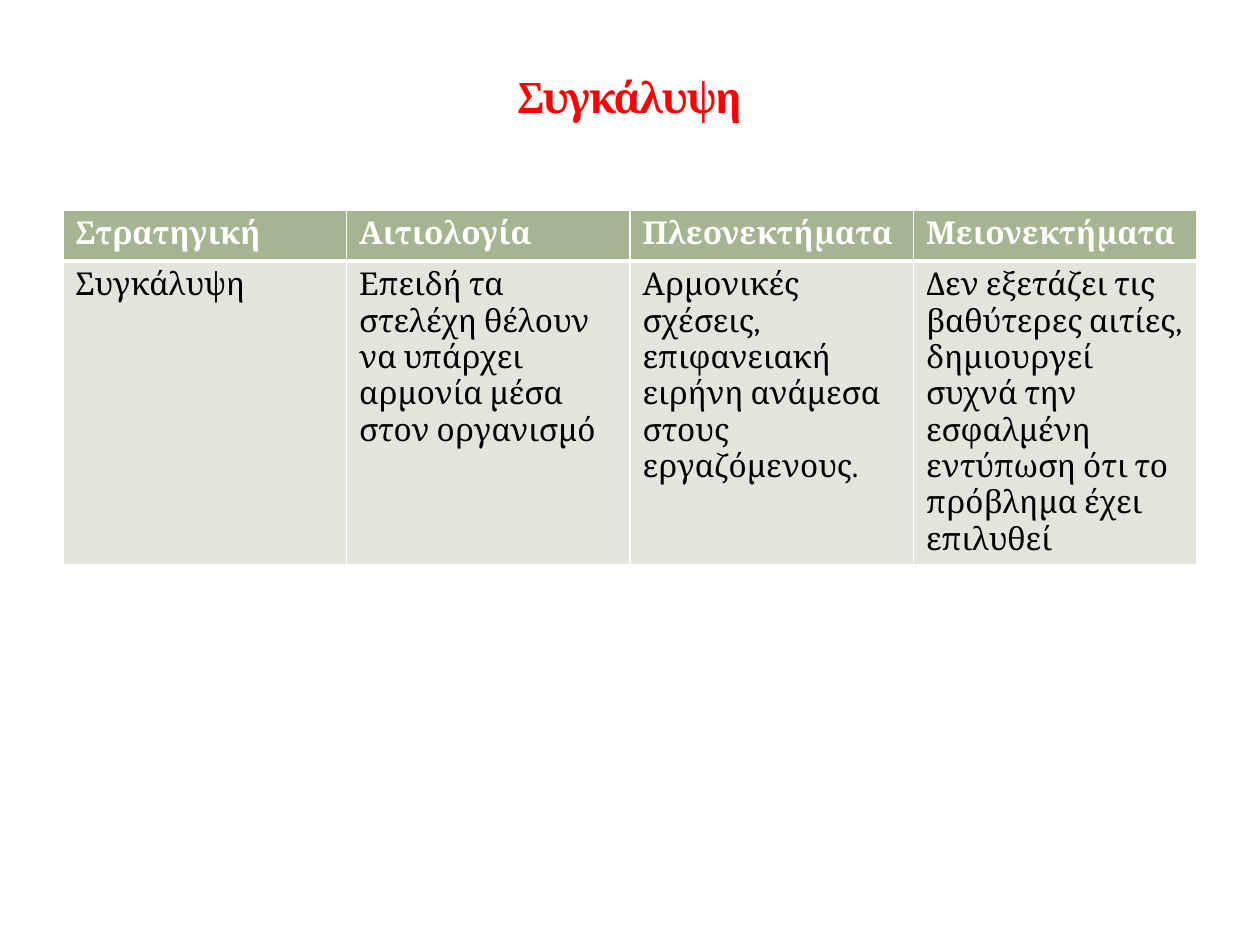
from lxml import etree
from pptx import Presentation, util as u
from pptx.dml.color import RGBColor
from pptx.enum import text
from pptx.oxml import ns

COLORS = {"title": "FF0000", "outline": "E0DDB1", "head": "A5B592",
          "body": "E1E5DC", "white": "FFFFFF", "black": "000000"}
ROWS = [
    ["Στρατηγική", "Αιτιολογία", "Πλεονεκτήματα", "Μειονεκτήματα"],
    ["Συγκάλυψη",
     "Επειδή τα στελέχη θέλουν να υπάρχει αρμονία μέσα στον οργανισμό",
     "Αρμονικές σχέσεις, επιφανειακή ειρήνη ανάμεσα στους εργαζόμενους.",
     "Δεν εξετάζει τις βαθύτερες αιτίες, δημιουργεί συχνά την εσφαλμένη "
     "εντύπωση ότι το πρόβλημα έχει επιλυθεί"],
]


def rgb(name):
    return RGBColor.from_string(COLORS[name])


def add_line(parent, tag, color, width, alpha=100):
    ln = etree.Element(ns.qn(tag), w=str(u.Pt(width)))
    fill = etree.SubElement(ln, ns.qn("a:solidFill"))
    clr = etree.SubElement(fill, ns.qn("a:srgbClr"), val=COLORS[color])
    if alpha < 100:
        etree.SubElement(clr, ns.qn("a:alpha"), val=str(alpha * 1000))
    parent.append(ln)
    return ln


def write(tf, content, size=18, color="black", bold=False, align=None, font="Cambria"):
    p = tf.paragraphs[0]
    p.alignment = align
    r = p.add_run()
    r.text = content
    r.font.name, r.font.size, r.font.bold = font, u.Pt(size), bold
    r.font.color.rgb = rgb(color)
    return r


class Deck:
    """Hold the presentation style and the current slide."""

    def __init__(self, width, height):
        self.prs = Presentation()
        self.prs.slide_width, self.prs.slide_height = u.Pt(width), u.Pt(height)
        self.s = self.prs.slides.add_slide(self.prs.slide_layouts[5])

    def title(self, content, *box):
        sp = self.s.shapes.title
        sp.left, sp.top, sp.width, sp.height = map(u.Pt, box)
        tf = sp.text_frame
        tf.vertical_anchor = text.MSO_ANCHOR.BOTTOM
        r = write(tf, content, 24, "title", True, text.PP_ALIGN.CENTER)
        rPr = r.font._element
        rPr.set("spc", "-100")
        rPr.insert(0, add_line(rPr, "a:ln", "outline", 0.25, 25))

    def table(self, rows, x, y, width, heights):
        frame = self.s.shapes.add_table(len(rows), len(rows[0]), u.Pt(x), u.Pt(y),
                                        u.Pt(width), u.Pt(sum(heights)))
        for i, (row, height) in enumerate(zip(rows, heights)):
            frame.table.rows[i].height = u.Pt(height)
            for j, content in enumerate(row):
                self.cell(frame.table.cell(i, j), content, head=i == 0)

    def cell(self, cell, content, head):
        write(cell.text_frame, content, color="white" if head else "black", bold=head)
        tcPr = cell._tc.get_or_add_tcPr()
        for side in "LRTB":
            add_line(tcPr, f"a:ln{side}", "white", 3 if head and side == "B" else 1)
        cell.fill.solid()
        cell.fill.fore_color.rgb = rgb("head" if head else "body")


def main():
    deck = Deck(720, 540)
    deck.title("Συγκάλυψη", 36, 12, 648, 61.5)
    deck.table(ROWS, 36, 120, 648, [29.2, 158.8])
    deck.prs.save("out.pptx")


if __name__ == "__main__":
    main()
